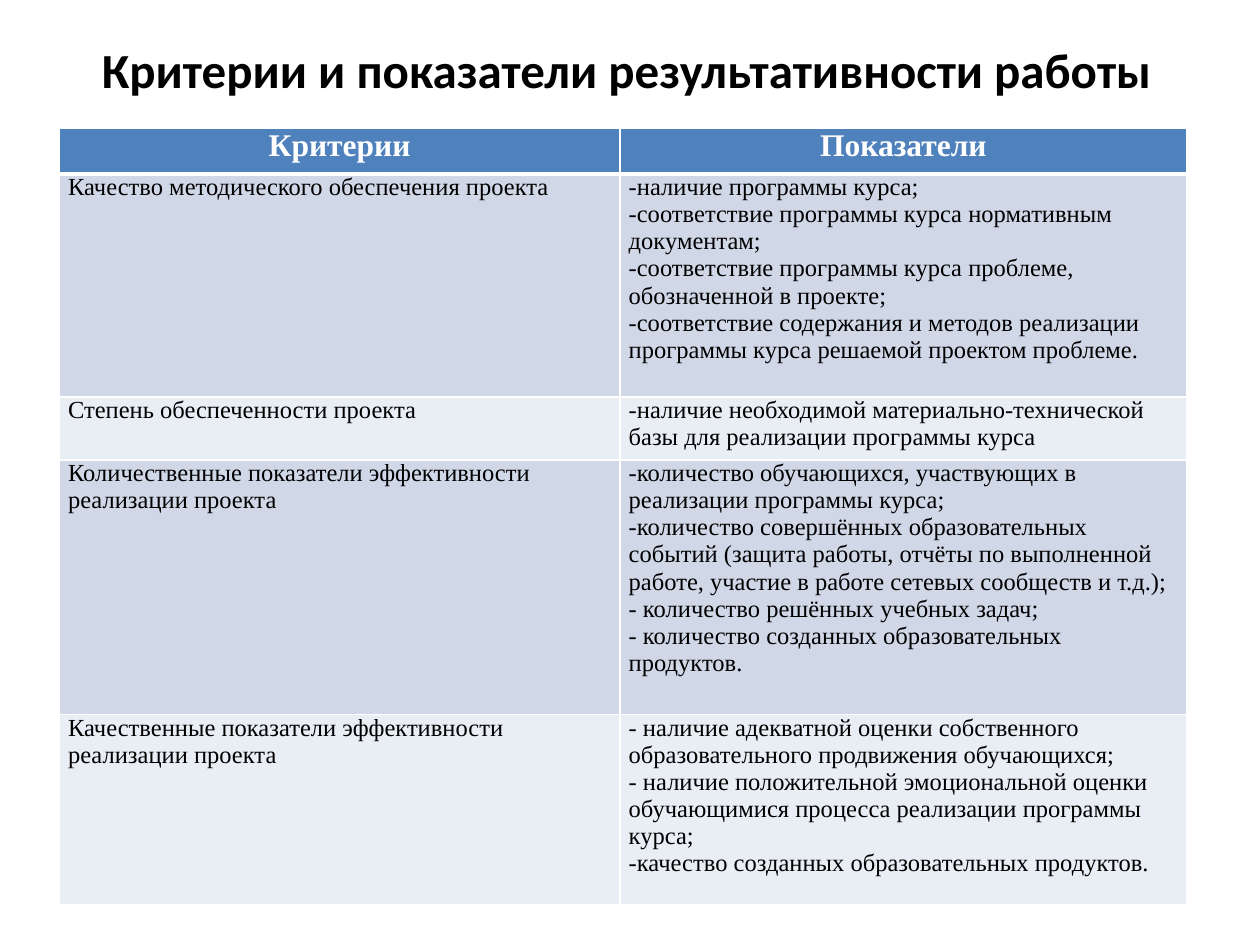
from dataclasses import dataclass

from lxml import etree
from pptx import Presentation
from pptx import util as u
from pptx.dml.color import RGBColor
from pptx.enum import text
from pptx.oxml import ns

COLORS = {"ink": "000000", "paper": "FFFFFF", "header": "4F81BD",
          "odd": "D0D8E8", "even": "E9EDF4"}
WIDTH, HEIGHT = u.Inches(10), u.Inches(7.5)
LEFT = 0.047  # share of the slide width
COLUMNS = (0.445, 0.45)  # shares of the slide width


@dataclass
class Style:
    font: str
    size: int
    color: str
    bold: bool = False
    align: text.PP_ALIGN = text.PP_ALIGN.LEFT


@dataclass
class Criterion:
    name: str
    indicators: list[str]
    height: float  # inches


TITLE = Style("Calibri", 28, "ink", True, text.PP_ALIGN.CENTER)
HEADER = Style("Times New Roman", 18, "paper", True, text.PP_ALIGN.CENTER)
BODY = Style("Times New Roman", 14, "ink")

HEADING = Criterion("Критерии", ["Показатели"], 0.36)
CRITERIA = [
    Criterion("Качество методического обеспечения проекта", [
        "-наличие программы курса;",
        "-соответствие программы курса нормативным документам;",
        "-соответствие программы курса проблеме, обозначенной в проекте;",
        "-соответствие содержания и методов реализации программы курса "
        "решаемой проектом проблеме.",
    ], 1.77),
    Criterion("Степень обеспеченности проекта", [
        "-наличие необходимой материально-технической базы для реализации "
        "программы курса",
    ], 0.5),
    Criterion("Количественные показатели эффективности реализации проекта", [
        "-количество обучающихся, участвующих в реализации программы курса;",
        "-количество совершённых образовательных событий (защита работы, "
        "отчёты по выполненной работе, участие в работе сетевых сообществ и т.д.);",
        "- количество решённых учебных задач;",
        "- количество созданных образовательных продуктов.",
    ], 2.02),
    Criterion("Качественные показатели эффективности реализации проекта", [
        "- наличие адекватной оценки собственного образовательного "
        "продвижения обучающихся;",
        "- наличие положительной эмоциональной оценки обучающимися процесса "
        "реализации программы курса;",
        "-качество созданных образовательных продуктов.",
    ], 1.51),
]


def rgb(name: str) -> RGBColor:
    return RGBColor.from_string(COLORS[name])


def write(frame, lines: list[str], style: Style) -> None:
    frame.text = "\n".join(lines)
    for paragraph in frame.paragraphs:
        paragraph.alignment = style.align
        font = paragraph.runs[0].font
        for key, value in {"name": style.font, "size": u.Pt(style.size),
                           "bold": style.bold}.items():
            setattr(font, key, value)
        font.color.rgb = rgb(style.color)


def set_borders(cell, bottom: int) -> None:
    properties = cell._tc.get_or_add_tcPr()
    for side, points in {"L": 1, "R": 1, "T": 1, "B": bottom}.items():
        line = etree.SubElement(properties, ns.qn(f"a:ln{side}"), w=str(u.Pt(points)))
        fill = etree.SubElement(line, ns.qn("a:solidFill"))
        etree.SubElement(fill, ns.qn("a:srgbClr"), val=COLORS["paper"])


def fill_cell(cell, lines: list[str], style: Style, color: str, bottom: int) -> None:
    for key, value in {"margin_left": u.Inches(0.07), "margin_right": u.Inches(0.07),
                       "margin_top": 0, "margin_bottom": 0}.items():
        setattr(cell, key, value)
    write(cell.text_frame, lines, style)
    set_borders(cell, bottom)
    cell.fill.solid()
    cell.fill.fore_color.rgb = rgb(color)


def add_title(slide, wording: str) -> None:
    title = slide.shapes.add_textbox(int(WIDTH * LEFT), u.Inches(0.39),
                                     int(WIDTH * 0.9), u.Inches(0.79))
    # The bottom margin lifts the line clear of the table
    for key, value in {"word_wrap": True, "margin_top": 0,
                       "margin_bottom": u.Inches(0.47),
                       "vertical_anchor": text.MSO_ANCHOR.MIDDLE}.items():
        setattr(title.text_frame, key, value)
    write(title.text_frame, [wording], TITLE)


def add_criteria(slide, rows: list[Criterion]) -> None:
    height = u.Inches(sum(row.height for row in rows))
    table = slide.shapes.add_table(len(rows), len(COLUMNS), int(WIDTH * LEFT),
                                   u.Inches(1.02), int(WIDTH * sum(COLUMNS)),
                                   height).table
    for column, share in zip(table.columns, COLUMNS):
        column.width = int(WIDTH * share)
    for index, row in enumerate(rows):
        table.rows[index].height = u.Inches(row.height)
        if index == 0:
            style, color, bottom = HEADER, "header", 3
        else:
            style, color, bottom = BODY, "odd" if index % 2 else "even", 1
        for cell, lines in zip(table.rows[index].cells, ([row.name], row.indicators)):
            fill_cell(cell, lines, style, color, bottom)


def main() -> None:
    deck = Presentation()
    deck.slide_width, deck.slide_height = WIDTH, HEIGHT
    slide = deck.slides.add_slide(deck.slide_layouts[6])
    add_title(slide, "Критерии и показатели результативности работы")
    add_criteria(slide, [HEADING, *CRITERIA])
    deck.save("out.pptx")


if __name__ == "__main__":
    main()
